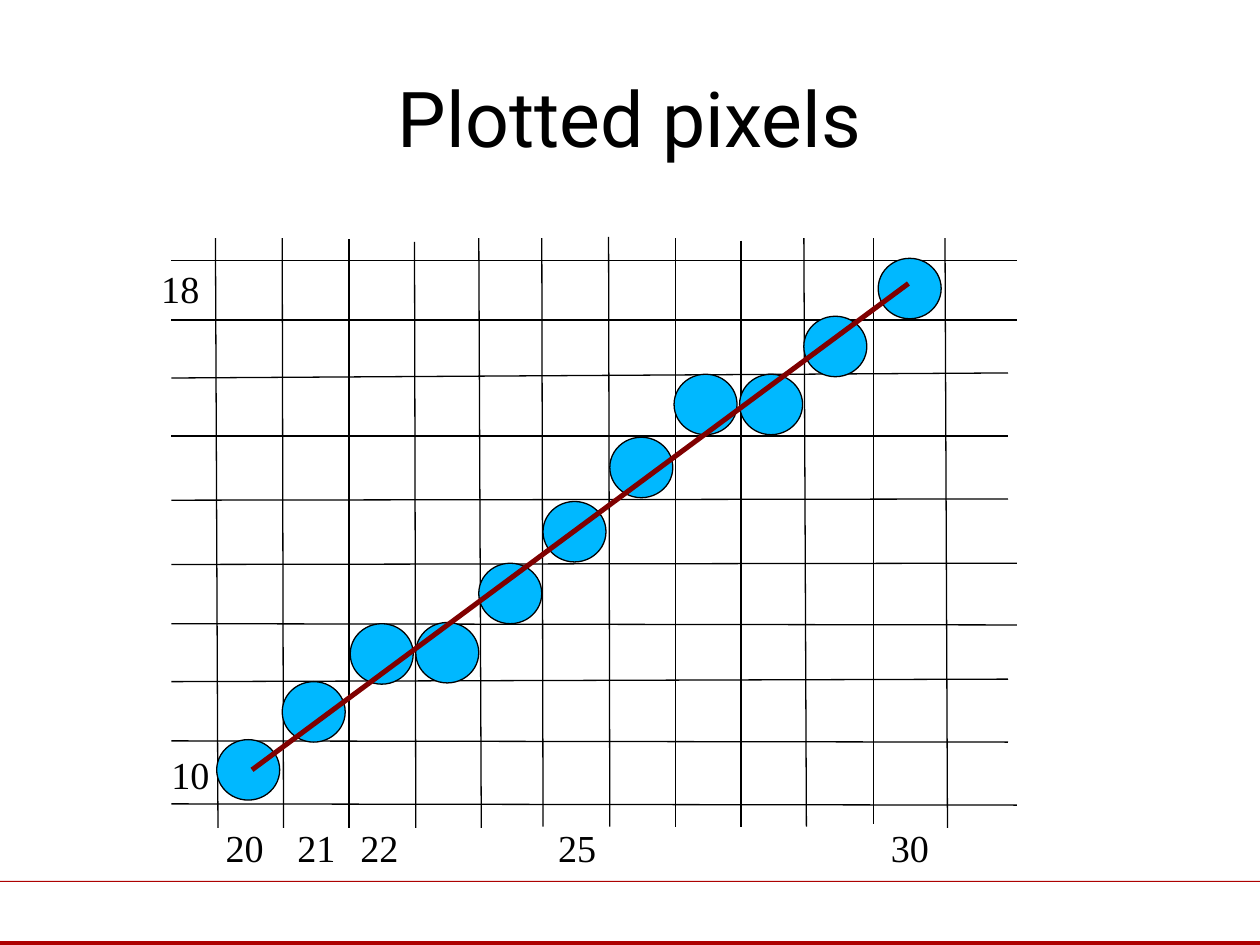
from lxml.etree import SubElement
from pptx import Presentation
from pptx.dml.color import RGBColor
from pptx.enum.shapes import MSO_CONNECTOR as Connector, MSO_SHAPE as Shape
from pptx.enum.text import MSO_ANCHOR as Anchor, PP_ALIGN as Align
from pptx.oxml.ns import qn
from pptx.util import Inches, Pt

BLACK, RED, MAROON, BLUE = "000000", "AD0101", "800000", "00B8FF"
DOT_WIDTH, DOT_HEIGHT = 0.5, 0.48

# Vertical grid lines: top x, top y, bottom x, bottom y
COLUMNS = [
    (1.71, 1.89, 1.73, 6.57), (2.24, 1.89, 2.25, 6.57), (2.77, 1.9, 2.77, 6.57),
    (3.29, 1.92, 3.3, 6.57), (3.8, 1.89, 3.82, 6.57), (4.3, 1.89, 4.31, 6.56),
    (4.83, 1.88, 4.84, 6.56), (5.36, 1.89, 5.36, 6.56), (5.88, 1.91, 5.88, 6.56),
    (6.38, 1.89, 6.4, 6.56), (6.93, 1.89, 6.93, 6.54), (7.5, 1.89, 7.52, 6.57),
]
# Horizontal grid lines: left y, right x, right y
ROW_LEFT = 1.36
ROWS = [
    (2.07, 8.07, 2.07), (2.54, 8.07, 2.54), (3, 8, 2.96), (3.46, 8, 3.46),
    (3.97, 8, 3.96), (4.48, 8.07, 4.47), (4.95, 8.07, 4.96), (5.41, 8, 5.39),
    (5.88, 8, 5.89), (6.38, 8.07, 6.39),
]
# Top left corner of each plotted pixel
PIXELS = [
    (1.72, 5.87), (2.24, 5.41), (2.78, 4.95), (3.3, 4.94), (3.8, 4.47), (4.31, 3.98),
    (4.84, 3.47), (5.35, 2.97), (5.87, 2.97), (6.38, 2.51), (6.97, 2.05),
]
X_LABELS = {"20": 1.79, "21": 2.36, "22": 2.86, "25": 4.43, "30": 7.07}
Y_LABELS = {"10": (1.36, 5.96), "18": (1.28, 2.11)}


def color(value):
    return RGBColor.from_string(value)


def add_filled(slide, kind, left, top, width, height, fill, outline=None):
    shape = slide.shapes.add_shape(
        kind, Inches(left), Inches(top), Inches(width), Inches(height))
    shape.shadow.inherit = False
    shape.fill.solid()
    shape.fill.fore_color.rgb = color(fill)
    if outline:
        shape.line.color.rgb = color(outline)
        shape.line.width = Pt(0.75)
    else:
        shape.line.fill.background()


def add_line(slide, x1, y1, x2, y2, line_color=BLACK, width=0.75):
    line = slide.shapes.add_connector(
        Connector.STRAIGHT, Inches(x1), Inches(y1), Inches(x2), Inches(y2))
    line.line.color.rgb = color(line_color)
    line.line.width = Pt(width)
    SubElement(line._element.spPr, qn("a:effectLst"))


def add_text(slide, text, left, top, width, height, font, size,
             align=Align.LEFT, anchor=Anchor.TOP):
    box = slide.shapes.add_textbox(
        Inches(left), Inches(top), Inches(width), Inches(height))
    frame = box.text_frame
    frame.word_wrap = True
    frame.vertical_anchor = anchor
    frame.margin_left = frame.margin_right = 0
    frame.margin_top = frame.margin_bottom = 0
    paragraph = frame.paragraphs[0]
    paragraph.text = text
    paragraph.alignment = align
    paragraph.font.name = font
    paragraph.font.size = Pt(size)
    paragraph.font.color.rgb = color(BLACK)


def add_label(slide, text, left, top):
    add_text(slide, text, left, top, 0.36, 0.37, "Times New Roman", 21.8)


def main():
    presentation = Presentation()
    presentation.slide_width = Inches(10)
    presentation.slide_height = Inches(7.5)
    slide = presentation.slides.add_slide(presentation.slide_layouts[6])

    # Footer rules and title
    add_filled(slide, Shape.RECTANGLE, 0, 6.99, 10, 0.01, RED)
    add_filled(slide, Shape.RECTANGLE, 0, 7.47, 10, 0.03, RED)
    add_text(slide, "Plotted pixels", 0.5, 0.3, 9, 1.25, "Roboto", 44,
             Align.CENTER, Anchor.MIDDLE)

    # Grid
    for column in COLUMNS:
        add_line(slide, *column)
    for left_y, right_x, right_y in ROWS:
        add_line(slide, ROW_LEFT, left_y, right_x, right_y)

    # Axis labels
    for text, left in X_LABELS.items():
        add_label(slide, text, left, 6.54)
    for text, (left, top) in Y_LABELS.items():
        add_label(slide, text, left, top)

    # Pixels and the ideal line through them
    for left, top in PIXELS:
        add_filled(slide, Shape.OVAL, left, top, DOT_WIDTH, DOT_HEIGHT, BLUE, BLACK)
    add_line(slide, 2, 6.11, 7.21, 2.25, MAROON, 2.89)

    presentation.save("out.pptx")


if __name__ == "__main__":
    main()
